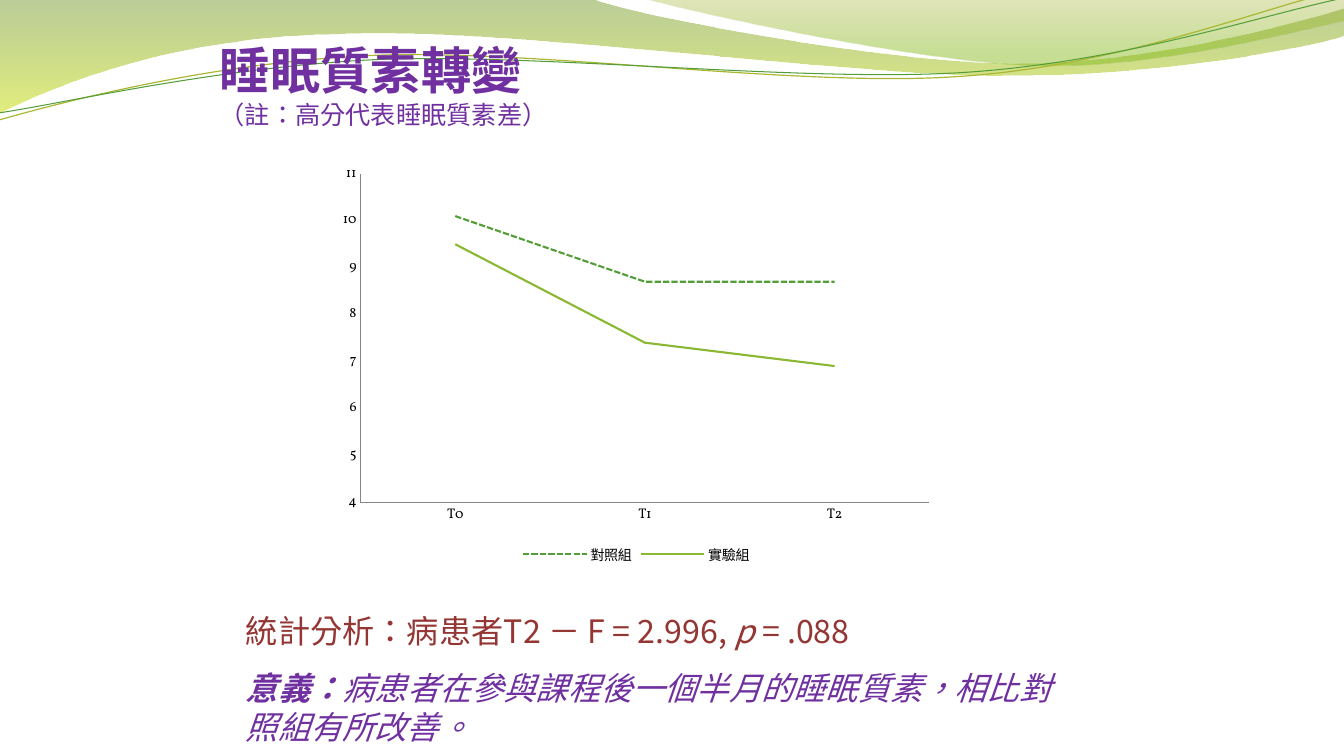
from dataclasses import dataclass

from lxml.etree import SubElement
from pptx import Presentation
from pptx.chart.data import CategoryChartData
from pptx.dml.color import RGBColor
from pptx.enum.chart import XL_CHART_TYPE, XL_LEGEND_POSITION, XL_MARKER_STYLE, XL_TICK_MARK
from pptx.enum.dml import MSO_LINE
from pptx.enum.text import MSO_ANCHOR, MSO_AUTO_SIZE, PP_ALIGN
from pptx.oxml.ns import qn
from pptx.util import Inches, Pt


@dataclass(frozen=True)
class Theme:
    font: str = "Noto Sans CJK SC"
    chart_font: str = "Vollkorn"
    language: str = "zh-TW"
    purple: str = "7030A0"
    red: str = "943634"
    green: str = "549E39"
    lime: str = "8AB833"
    olive: str = "A9B733"
    axis: str = "868686"
    black: str = "000000"
    title: int = 36
    note: int = 18
    body: int = 23
    chart: int = 10


def rgb(value):
    return RGBColor.from_string(value)


class SlideBuilder:
    def __init__(self, slide, theme):
        self.slide = slide
        self.theme = theme

    def freeform(self, start, segments, close):
        """Join straight (x, y) and cubic (x1, y1, x2, y2, x, y) segments."""
        fb = self.slide.shapes.build_freeform(*map(Inches, start))
        fb.add_line_segments([tuple(map(Inches, seg[-2:])) for seg in segments], close=close)
        sp = fb.convert_to_shape()
        sp.shadow.inherit = False
        lines = list(sp._element.spPr.iter(qn("a:lnTo")))
        for line, seg in zip(lines, segments):
            if len(seg) == 2:
                continue
            cubic = SubElement(line.getparent(), qn("a:cubicBezTo"))
            for x, y in zip(seg[::2], seg[1::2]):
                pt = SubElement(cubic, qn("a:pt"))
                pt.set("x", str(Inches(x) - sp.left))
                pt.set("y", str(Inches(y) - sp.top))
            line.getparent().replace(line, cubic)
        return sp

    def wave(self, start, segments, stops):
        """Draw a closed band; stops are (position, colour, opacity %), top to bottom."""
        sp = self.freeform(start, segments, True)
        sp.line.fill.background()
        sp.fill.gradient()
        sp.fill.gradient_angle = 270
        for stop, (position, color, _) in zip(sp.fill.gradient_stops, stops):
            stop.position = position
            stop.color.rgb = rgb(color)
        colors = list(sp._element.spPr.iter(qn("a:srgbClr")))
        for clr, (_, _, opacity) in zip(colors, stops):
            SubElement(clr, qn("a:alpha")).set("val", str(opacity * 1000))

    def curve(self, start, segments, color, width):
        sp = self.freeform(start, segments, False)
        sp.fill.background()
        sp.line.color.rgb = rgb(color)
        sp.line.width = Pt(width)

    def text(self, box, insets, anchor, paragraphs):
        """Add paragraphs of (text, size, colour, bold, italic) runs; None breaks the line."""
        sp = self.slide.shapes.add_textbox(*map(Inches, box))
        tf = sp.text_frame
        tf.word_wrap = True
        tf.vertical_anchor = anchor
        tf.margin_left, tf.margin_top, tf.margin_right, tf.margin_bottom = map(Inches, insets)
        for i, runs in enumerate(paragraphs):
            p = tf.add_paragraph() if i else tf.paragraphs[0]
            p.alignment = PP_ALIGN.LEFT
            for run in runs:
                if run is None:
                    p.add_line_break()
                    continue
                text, size, color, bold, italic = run
                r = p.add_run()
                r.text = text
                r.font.size = Pt(size)
                r.font.color.rgb = rgb(color)
                r.font.bold = bold
                r.font.italic = italic
                r.font.name = self.theme.font
                r.font._element.set("lang", self.theme.language)
                SubElement(r.font._element, qn("a:ea")).set("typeface", self.theme.font)
        return tf

    def line_chart(self, box, categories, series):
        """Add a line chart; series are (name, values, colour, dash style)."""
        th = self.theme
        data = CategoryChartData()
        data.categories = categories
        for name, values, _, _ in series:
            data.add_series(name, values)
        chart = self.slide.shapes.add_chart(
            XL_CHART_TYPE.LINE, *map(Inches, box), data).chart
        chart.has_title = False
        chart.font.name = th.chart_font
        chart.font.size = Pt(th.chart)
        chart.font.color.rgb = rgb(th.black)
        chart.has_legend = True
        chart.legend.position = XL_LEGEND_POSITION.BOTTOM
        chart.legend.include_in_layout = False
        for axis in (chart.category_axis, chart.value_axis):
            axis.major_tick_mark = axis.minor_tick_mark = XL_TICK_MARK.NONE
            axis.has_major_gridlines = False
            axis.format.line.color.rgb = rgb(th.axis)
            axis.format.line.width = Pt(0.75)
        chart.value_axis.minimum_scale = 4
        chart.value_axis.maximum_scale = 11
        chart.value_axis.major_unit = 1
        plot = chart.plots[0]
        plot.vary_by_categories = False
        for ser, (_, _, color, dash) in zip(plot.series, series):
            ser.smooth = False
            ser.marker.style = XL_MARKER_STYLE.NONE
            ser.format.line.color.rgb = rgb(color)
            ser.format.line.width = Pt(1.5)
            ser.format.line.dash_style = dash


def main():
    prs = Presentation()
    prs.slide_width = Inches(13.33)
    prs.slide_height = Inches(7.5)
    th = Theme()
    s = SlideBuilder(prs.slides.add_slide(prs.slide_layouts[6]), th)

    s.wave((0, 0), [
        (5.87, -0.01),
        (6.34, 0.17, 8.84, 0.63, 10.11, 0.63),
        (11.37, 0.63, 12.77, 0.26, 13.33, 0.09),
        (13.34, 0.36),
        (13.11, 0.44, 11.59, 0.76, 9.94, 0.75),
        (8.29, 0.75, 5.09, 0.28, 3.43, 0.34),
        (1.72, 0.36, 0.61, 0.83, -0.02, 1.13),
    ], [(0, "69921C", 45), (1, "CCE10F", 55)])
    s.wave((6.38, -0.01), [
        (6.79, 0.11, 9.09, 0.62, 10.25, 0.65),
        (11.4, 0.69, 12.82, 0.32, 13.33, 0.21),
        (13.33, 0),
    ], [(0, "9BAA1A", 30), (0.8, "81BA16", 45)])
    s.curve((-0.01, 1.19), [
        (0.63, 1.01, 2.1, 0.62, 3.69, 0.55),
        (5.27, 0.48, 7.89, 0.87, 9.49, 0.76),
        (11.1, 0.66, 12.51, 0.08, 13.3, -0.1),
    ], th.olive, 0.85)
    s.curve((-0.01, 1.12), [
        (0.62, 1.03, 2.18, 0.66, 3.77, 0.59),
        (5.37, 0.53, 7.96, 0.82, 9.55, 0.72),
        (11.14, 0.62, 12.55, 0.14, 13.33, -0.02),
    ], th.green, 0.75)

    s.text((2.18, 0.28, 9, 1.01), (0, 0.05, 0, 0), MSO_ANCHOR.BOTTOM, [
        [("睡眠質素轉變", th.title, th.purple, True, False),
         None,
         ("（註：高分代表睡眠質素差）", th.note, th.purple, False, False)],
    ])
    s.line_chart((3.28, 1.55, 6.06, 4.09), ["T0", "T1", "T2"], [
        ("對照組", (10.1, 8.7, 8.7), th.green, MSO_LINE.SQUARE_DOT),
        ("實驗組", (9.5, 7.4, 6.9), th.lime, MSO_LINE.SOLID),
    ])
    tf = s.text((2.34, 5.92, 8.43, 1.48), (0.1, 0.14, 0.1, 0), MSO_ANCHOR.MIDDLE, [
        [("統計分析：病患者T2 － F = 2.996, ", th.body, th.red, False, False),
         ("p", th.body, th.red, False, True),
         (" = .088", th.body, th.red, False, False)],
        [("意義：", th.body, th.purple, True, True),
         ("病患者在參與課程後一個半月的睡眠質素，相比對照組有所改善。",
          th.body, th.purple, False, True)],
    ])
    tf.auto_size = MSO_AUTO_SIZE.SHAPE_TO_FIT_TEXT
    tf.paragraphs[1].space_before = Pt(13.5)

    prs.save("out.pptx")


if __name__ == "__main__":
    main()
